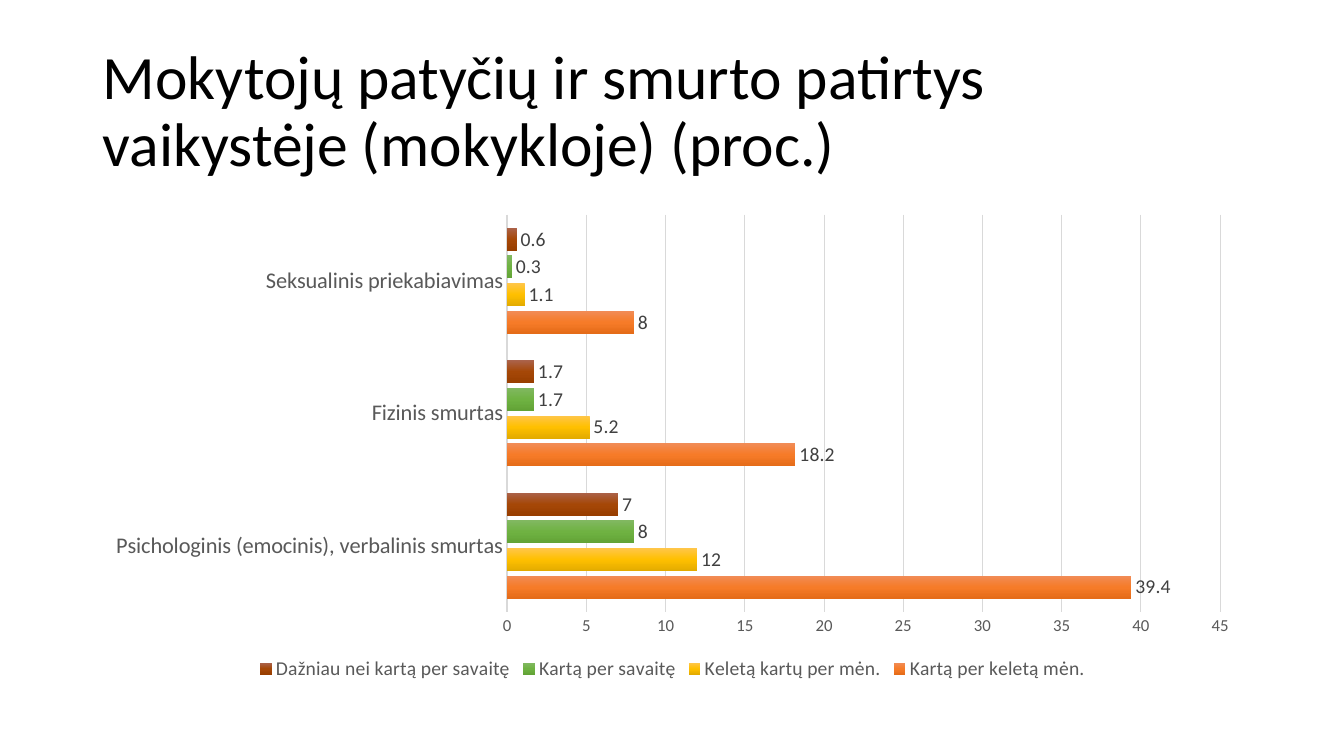
from copy import deepcopy

from pptx import Presentation
from pptx.chart.data import CategoryChartData
from pptx.dml.color import RGBColor
from pptx.enum.chart import XL_CHART_TYPE, XL_LABEL_POSITION, XL_LEGEND_POSITION, XL_TICK_MARK
from pptx.enum.text import MSO_ANCHOR
from pptx.oxml.ns import qn
from pptx.util import Emu, Pt

PX = 9071


def box(*lengths):
    return [Emu(length * PX) for length in lengths]


def style(font, size, color):
    font.name = "Calibri"
    font.size = Pt(size)
    font.color.rgb = RGBColor.from_string(color)


deck = Presentation()
deck.slide_width, deck.slide_height = box(1344, 756)
slide = deck.slides.add_slide(deck.slide_layouts[6])

heading = slide.shapes.add_textbox(*box(93, 40, 1106, 146)).text_frame
heading.word_wrap = True
heading.vertical_anchor = MSO_ANCHOR.MIDDLE
heading.paragraphs[0].line_spacing = 0.9
heading_run = heading.paragraphs[0].add_run()
heading_run.text = "Mokytojų patyčių ir smurto patirtys vaikystėje (mokykloje) (proc.)"
style(heading_run.font, 44, "000000")

frequencies = [
    ("Kartą per keletą mėn.", (39.4, 18.2, 8), ("F18C57", "F67B28", "E56C19")),
    ("Keletą kartų per mėn.", (12, 5.2, 1.1), ("FFC64B", "FFC000", "E3AB00")),
    ("Kartą per savaitę", (8, 1.7, 0.3), ("81B861", "6FB242", "62A336")),
    ("Dažniau nei kartą per savaitę", (7, 1.7, 0.6), ("AB634B", "A54707", "983E00")),
]
violence = CategoryChartData()
violence.categories = [
    "Psichologinis (emocinis), verbalinis smurtas",
    "Fizinis smurtas",
    "Seksualinis priekabiavimas",
]
for name, percentages, shades in frequencies:
    violence.add_series(name, percentages)

chart = slide.shapes.add_chart(
    XL_CHART_TYPE.BAR_CLUSTERED, *box(93, 205, 1159, 480), violence
).chart
style(chart.font, 10, "000000")
chart.has_title = False
chart.has_legend = True
chart.legend.position = XL_LEGEND_POSITION.BOTTOM
chart.legend.include_in_layout = False
style(chart.legend.font, 14, "595959")

kinds = chart.category_axis
percent = chart.value_axis
for axis, size in ((kinds, 16), (percent, 12)):
    axis.major_tick_mark = XL_TICK_MARK.NONE
    axis.minor_tick_mark = XL_TICK_MARK.NONE
    style(axis.tick_labels.font, size, "595959")
kinds.format.line.color.rgb = RGBColor.from_string("D9D9D9")
kinds.format.line.width = Pt(1)
percent.minimum_scale = 0
percent.maximum_scale = 45
percent.major_unit = 5
percent.format.line.fill.background()
percent.has_major_gridlines = True
percent.major_gridlines.format.line.color.rgb = RGBColor.from_string("D9D9D9")
percent.major_gridlines.format.line.width = Pt(0.75)

bars = chart.plots[0]
bars.gap_width = 115
bars.overlap = -20
bars.vary_by_categories = False
for series, (name, percentages, shades) in zip(bars.series, frequencies):
    fill = series.format.fill
    fill.gradient()
    fill.gradient_angle = 270
    stops = series.format._element.find(".//" + qn("a:gsLst"))
    stops.append(deepcopy(stops[-1]))
    for stop, position, shade in zip(fill.gradient_stops, (0, 0.5, 1), shades):
        stop.position = position
        stop.color.rgb = RGBColor.from_string(shade)
    labels = series.data_labels
    labels.show_value = True
    labels.position = XL_LABEL_POSITION.OUTSIDE_END
    style(labels.font, 14, "404040")

deck.save("out.pptx")
